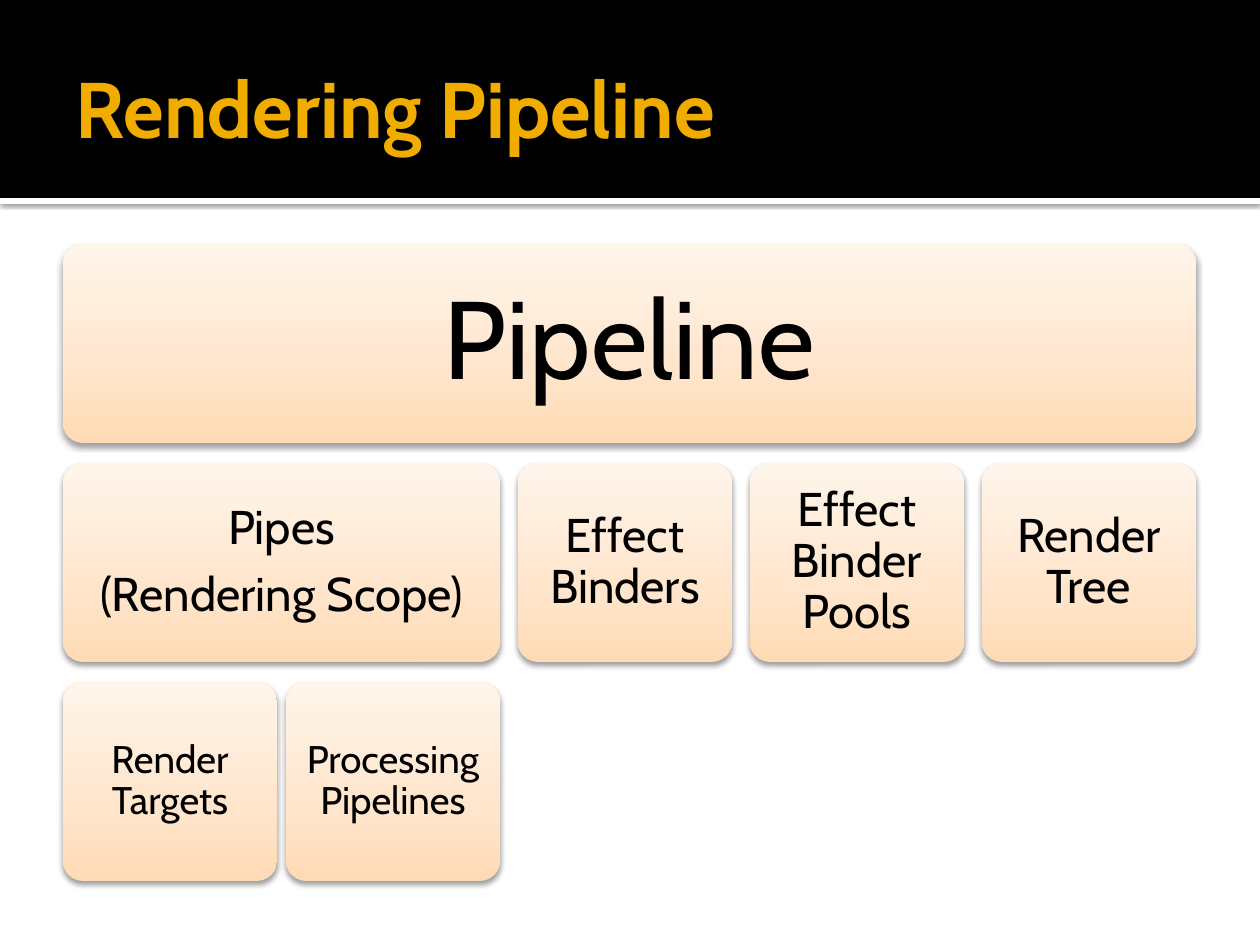
from lxml.etree import SubElement
from pptx import Presentation
from pptx.dml.color import RGBColor
from pptx.enum.shapes import MSO_SHAPE
from pptx.enum.text import MSO_ANCHOR, MSO_AUTO_SIZE, PP_ALIGN
from pptx.oxml import parse_xml
from pptx.oxml.ns import nsdecls, qn
from pptx.util import Pt

PX = 914400 / 126
PAGE_WIDTH, PAGE_HEIGHT = 1260, 945
FONT = "Cabin"
BLACK = RGBColor(0x00, 0x00, 0x00)
WHITE = RGBColor(0xFF, 0xFF, 0xFF)
GOLD = RGBColor(0xF0, 0xAD, 0x00)
PEACH = RGBColor(0xFF, 0xDB, 0xB5)
APRICOT = RGBColor(0xFF, 0xE5, 0xCB)
CREAM = RGBColor(0xFF, 0xF5, 0xEB)
TILE_STOPS = [(0, PEACH), (35, APRICOT), (100, CREAM)]

TILE_WIDTH, TILE_HEIGHT = 214, 199
GROUP_GAP, CHILD_GAP, ROW_GAP = 18, 9, 20
# Each level of the hierarchy: text size in points, inset in px
LEVELS = [(63, 27), (27, 8), (22, 6)]
TREE = ("Pipeline", [
    ("Pipes\n(Rendering Scope)", [
        ("Render Targets", []),
        ("Processing Pipelines", []),
    ]),
    ("Effect Binders", []),
    ("Effect Binder Pools", []),
    ("Render Tree", []),
])


def px(*lengths):
    return [round(length * PX) for length in lengths]


def add_shadow(shape, alpha, blur, distance):
    """Cast a black shadow straight down; blur and distance in points."""
    shape.shadow.inherit = False
    effects = shape._element.spPr.find(qn("a:effectLst"))
    shadow = SubElement(effects, qn("a:outerShdw"), blurRad=str(Pt(blur)),
                        dist=str(Pt(distance)), dir="5400000", rotWithShape="0")
    color = SubElement(shadow, qn("a:srgbClr"), val=str(BLACK))
    SubElement(color, qn("a:alpha"), val=str(alpha * 1000))


def fill_gradient(shape, stops):
    """Fill from bottom to top with (percent, colour) stops."""
    shape.fill.gradient()
    shape.fill.gradient_angle = 90
    stop_list = shape._element.spPr.find(qn("a:gradFill")).find(qn("a:gsLst"))
    stop_list.clear()
    for percent, color in stops:
        stop_list.append(parse_xml(
            f'<a:gs {nsdecls("a")} pos="{percent * 1000}">'
            f'<a:srgbClr val="{color}"/></a:gs>'))


def set_frame(frame, left, top, right, bottom):
    frame.word_wrap = True
    frame.auto_size = MSO_AUTO_SIZE.NONE
    frame.vertical_anchor = MSO_ANCHOR.MIDDLE
    (frame.margin_left, frame.margin_top,
     frame.margin_right, frame.margin_bottom) = px(left, top, right, bottom)


def set_font(para, size, color, bold=False):
    para.font.name = FONT
    para.font.size = Pt(size)
    para.font.bold = bold
    para.font.color.rgb = color


def add_header(page, left, top, width, height):
    rule_height = 6
    bars = [(top + height, rule_height, WHITE), (top, height, BLACK)]
    for bar_top, bar_height, color in bars:
        bar = page.shapes.add_shape(
            MSO_SHAPE.RECTANGLE, *px(left, bar_top, width, bar_height))
        bar.fill.solid()
        bar.fill.fore_color.rgb = color
        bar.line.fill.background()
        if color == WHITE:
            add_shadow(bar, 60, 2.5, 0.8)
        else:
            bar.shadow.inherit = False

    title = page.shapes.title
    title.left, title.top, title.width, title.height = px(
        left + 63, top + 21, width - 126, height - 25)
    set_frame(title.text_frame, 13, 6, 6, 6)
    title.text_frame.text = "Rendering Pipeline"
    para = title.text_frame.paragraphs[0]
    para.alignment = PP_ALIGN.LEFT
    set_font(para, 45, GOLD, bold=True)
    page.shapes._spTree.append(title._element)  # in front of the bars


def add_tile(page, left, top, width, text, level):
    size, inset = LEVELS[level]
    tile = page.shapes.add_shape(
        MSO_SHAPE.ROUNDED_RECTANGLE, *px(left, top, width, TILE_HEIGHT))
    tile.adjustments[0] = 0.1
    fill_gradient(tile, TILE_STOPS)
    tile.line.fill.background()
    add_shadow(tile, 38, 3.5, 2)
    set_frame(tile.text_frame, inset, inset, inset, inset)
    tile.text_frame.text = text
    for para in tile.text_frame.paragraphs:
        para.alignment = PP_ALIGN.CENTER
        para.line_spacing = 0.9
        para.space_after = Pt(round(size * 0.35))
        set_font(para, size, BLACK)


def gap_below(level):
    return GROUP_GAP if level == 0 else CHILD_GAP


def tree_width(node, level=0):
    children = node[1]
    if not children:
        return TILE_WIDTH
    widths = [tree_width(child, level + 1) for child in children]
    return sum(widths) + gap_below(level) * (len(widths) - 1)


def add_tree(page, left, top, node, level=0):
    """Place a tile that spans its children, and the children below it."""
    text, children = node
    add_tile(page, left, top, tree_width(node, level), text, level)
    for child in children:
        add_tree(page, left, top + TILE_HEIGHT + ROW_GAP, child, level + 1)
        left += tree_width(child, level + 1) + gap_below(level)


def main():
    deck = Presentation()
    deck.slide_width, deck.slide_height = px(PAGE_WIDTH, PAGE_HEIGHT)
    page = deck.slides.add_slide(deck.slide_layouts[5])
    add_header(page, 0, 0, PAGE_WIDTH, 198)
    add_tree(page, 63, 244, TREE)
    deck.save("out.pptx")


if __name__ == "__main__":
    main()
